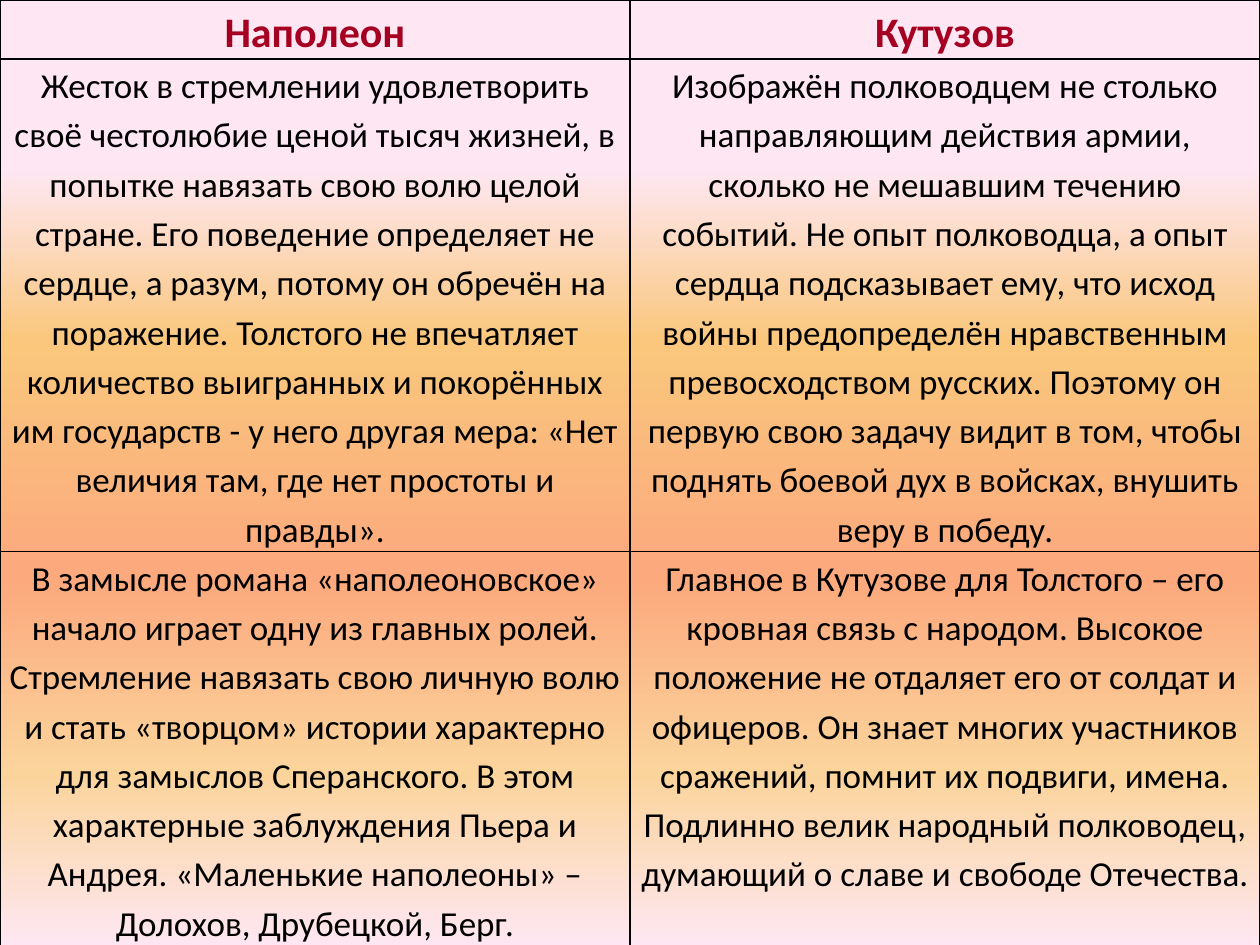
from lxml import etree
from pptx import Presentation
from pptx.dml.color import RGBColor
from pptx.enum.text import PP_ALIGN
from pptx.oxml.ns import qn
from pptx.util import Inches, Pt

CENTER = PP_ALIGN.CENTER
BLANK_LAYOUT = 6
COLORS = {
    "heading": "A50021",
    "text": "000000",
    "border": "000000",
    "pink": "FEE7F2",
    "gold": "FAC77D",
    "coral": "FBA97D",
    "sand": "FBD49C",
}
BACKGROUND_STOPS = [(18, "pink"), (36, "gold"), (61, "coral"), (82, "sand"), (100, "pink")]
ROW_HEIGHTS = [0.46, 3.9, 3]
COMPARISON = [
    ("Наполеон", "Кутузов"),
    (
        "Жесток в стремлении удовлетворить своё честолюбие ценой тысяч жизней, "
        "в попытке навязать свою волю целой стране. Его поведение определяет не "
        "сердце, а разум, потому он обречён на поражение. Толстого не впечатляет "
        "количество выигранных и покорённых им государств - у него другая мера: "
        "«Нет величия там, где нет простоты и правды».",
        "Изображён полководцем не столько направляющим действия армии, сколько "
        "не мешавшим течению событий. Не опыт полководца, а опыт сердца "
        "подсказывает ему, что исход войны предопределён нравственным "
        "превосходством русских. Поэтому он первую свою задачу видит в том, чтобы "
        "поднять боевой дух в войсках, внушить веру в победу.",
    ),
    (
        "В замысле романа «наполеоновское» начало играет одну из главных ролей. "
        "Стремление навязать свою личную волю и стать «творцом» истории характерно "
        "для замыслов Сперанского. В этом характерные заблуждения Пьера и Андрея. "
        "«Маленькие наполеоны» – Долохов, Друбецкой, Берг.",
        "Главное в Кутузове для Толстого – его кровная связь с народом. Высокое "
        "положение не отдаляет его от солдат и офицеров. Он знает многих участников "
        "сражений, помнит их подвиги, имена. Подлинно велик народный полководец, "
        "думающий о славе и свободе Отечества.",
    ),
]


class SlideBuilder:
    """Holds the style and the current slide."""

    font_name = "Calibri"
    heading_size = Pt(24)
    body_size = Pt(20)
    line_spacing = 1.15
    side_margin = Inches(0.07)
    border_width = Pt(1)

    def __init__(self, slide):
        self.slide = slide

    def background(self, stops):
        fill = self.slide.background.fill
        fill.gradient()
        fill.gradient_angle = 270  # counter-clockwise, so the colours run downwards
        stop_list = self.slide.element.find(".//" + qn("a:gsLst"))
        for stop in list(stop_list):
            stop_list.remove(stop)
        for percent, color in stops:
            stop = etree.SubElement(stop_list, qn("a:gs"), pos=str(percent * 1000))
            etree.SubElement(stop, qn("a:srgbClr"), val=COLORS[color])

    def table(self, rows, left, top, width, row_heights):
        frame = self.slide.shapes.add_table(
            len(rows), len(rows[0]), left, top, width, sum(row_heights)
        )
        table = frame.table
        table.horz_banding = False
        table.first_row = False
        for row, height in zip(table.rows, row_heights):
            row.height = height
        for row_index, texts in enumerate(rows):
            for column_index, text in enumerate(texts):
                self.cell(table.cell(row_index, column_index), text, row_index == 0)

    def cell(self, cell, text, is_heading):
        cell.margin_left = cell.margin_right = self.side_margin
        cell.margin_top = cell.margin_bottom = 0
        cell.text = text
        paragraph = cell.text_frame.paragraphs[0]
        paragraph.alignment = CENTER
        paragraph.line_spacing = self.line_spacing
        font = paragraph.font
        font.name = self.font_name
        font.size = self.heading_size if is_heading else self.body_size
        font.bold = is_heading
        font.color.rgb = RGBColor.from_string(COLORS["heading" if is_heading else "text"])
        self.borders(cell)
        cell.fill.background()

    def borders(self, cell):
        properties = cell._tc.get_or_add_tcPr()
        for side in ("a:lnL", "a:lnR", "a:lnT", "a:lnB"):
            line = etree.SubElement(properties, qn(side), w=str(self.border_width))
            fill = etree.SubElement(line, qn("a:solidFill"))
            etree.SubElement(fill, qn("a:srgbClr"), val=COLORS["border"])


def main():
    presentation = Presentation()
    presentation.slide_width = Inches(10)
    presentation.slide_height = Inches(7.5)
    slide = presentation.slides.add_slide(presentation.slide_layouts[BLANK_LAYOUT])
    builder = SlideBuilder(slide)

    # Background
    builder.background(BACKGROUND_STOPS)

    # Comparison of the two commanders
    row_heights = [Inches(height) for height in ROW_HEIGHTS]
    builder.table(COMPARISON, 0, 0, presentation.slide_width, row_heights)

    presentation.save("out.pptx")


if __name__ == "__main__":
    main()
